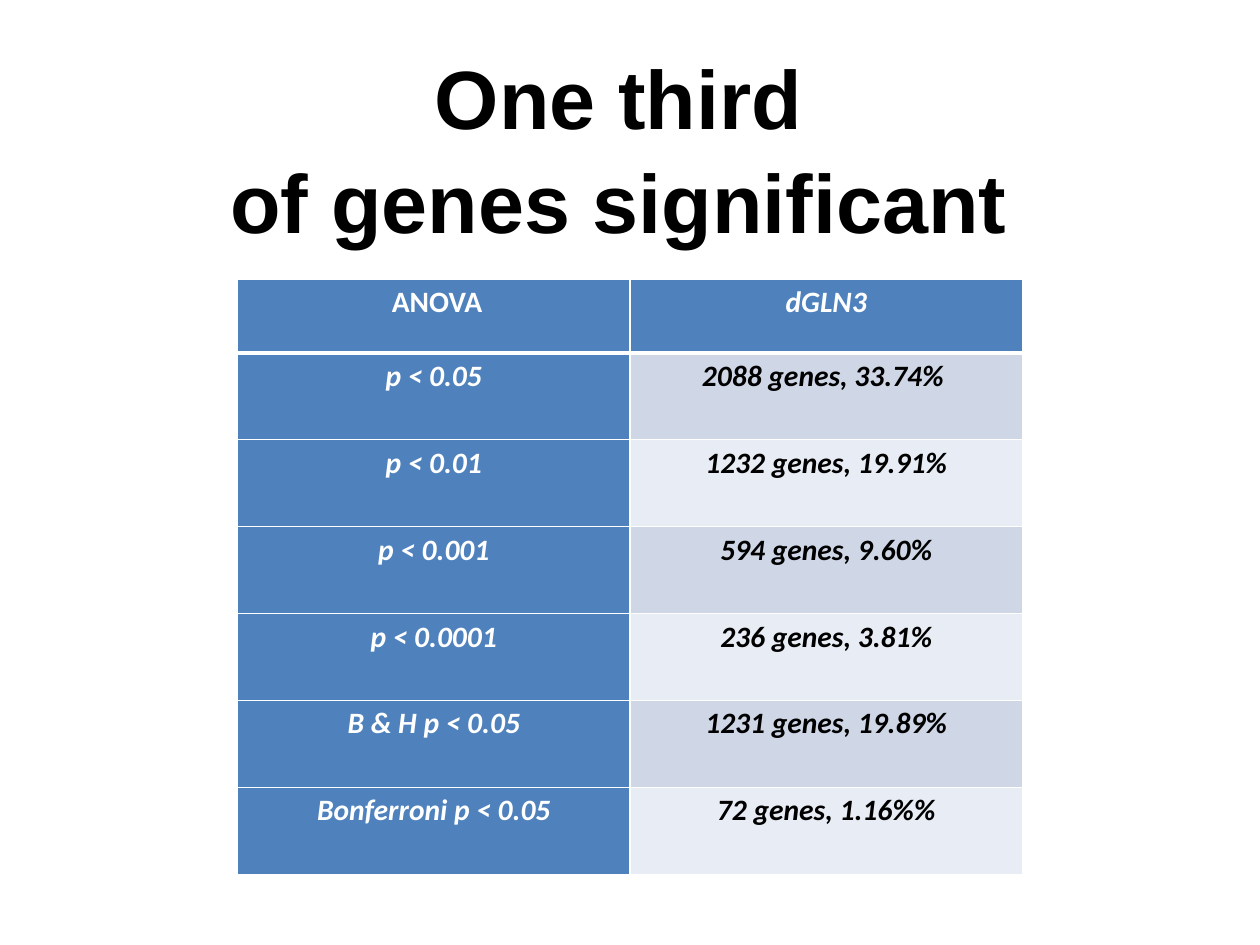
from lxml import etree
from pptx import Presentation
from pptx import util as u
from pptx.dml.color import RGBColor
from pptx.enum import text
from pptx.oxml import ns

# Content
HEADLINE = ["One third ", "of genes significant "]
RESULTS = [
    (" ANOVA", "dGLN3"),
    ("p < 0.05", "2088 genes, 33.74% "),
    ("p < 0.01", "1232 genes, 19.91%"),
    ("p < 0.001", "594 genes, 9.60%"),
    ("p < 0.0001", "236 genes, 3.81%"),
    ("B & H p < 0.05", "1231 genes, 19.89%"),
    ("Bonferroni p < 0.05", "72 genes, 1.16%%"),
]

# Look
BLACK = RGBColor(0x00, 0x00, 0x00)
WHITE = RGBColor(0xFF, 0xFF, 0xFF)
BLUE = RGBColor(0x4F, 0x81, 0xBD)
BANDS = [RGBColor(0xE8, 0xEC, 0xF4), RGBColor(0xCF, 0xD7, 0xE7)]
HEADLINE_FONT = {"name": "Arial", "size": u.Pt(67.2), "bold": True}
RESULT_FONT = {"name": "Calibri", "size": u.Pt(24), "bold": True}
HEADLINE_PLACE = {"left": u.Pt(75), "top": u.Pt(35.3),
                  "width": u.Pt(874), "height": u.Pt(170)}
HEADLINE_FRAME = {"margin_left": 0, "margin_top": 0, "margin_right": 0,
                  "margin_bottom": 0, "word_wrap": True,
                  "auto_size": text.MSO_AUTO_SIZE.NONE,
                  "vertical_anchor": text.MSO_ANCHOR.MIDDLE}
HEADLINE_PARAGRAPH = {"alignment": text.PP_ALIGN.CENTER, "space_before": u.Pt(4)}
RESULT_PARAGRAPH = {"alignment": text.PP_ALIGN.CENTER, "line_spacing": 1.15}
CELL_FRAME = {"margin_left": 0, "margin_top": 0, "margin_right": 0,
              "margin_bottom": 0, "vertical_anchor": text.MSO_ANCHOR.TOP}
TABLE_LEFT, TABLE_TOP, COLUMN_WIDTH = 193, 227, 319
HEADER_HEIGHT, RESULT_HEIGHT = 60, 70.6
THIN, THICK = 1, 3


def apply(target, formats):
    for name, value in formats.items():
        setattr(target, name, value)


def write(paragraph, words, layout, font, color, italic=False):
    apply(paragraph, layout)
    run = paragraph.add_run()
    run.text = words
    apply(run.font, {**font, "italic": italic})
    run.font.color.rgb = color


def add_borders(cell, widths):
    properties = cell._tc.get_or_add_tcPr()
    for side, width in widths.items():
        line = etree.SubElement(properties, ns.qn(f"a:ln{side}"), w=str(u.Pt(width)))
        fill = etree.SubElement(line, ns.qn("a:solidFill"))
        etree.SubElement(fill, ns.qn("a:srgbClr"), val=str(WHITE))


def add_headline(slide):
    headline = slide.shapes.title
    apply(headline, HEADLINE_PLACE)
    frame = headline.text_frame
    apply(frame, HEADLINE_FRAME)
    for i, words in enumerate(HEADLINE):
        paragraph = frame.add_paragraph() if i else frame.paragraphs[0]
        write(paragraph, words, HEADLINE_PARAGRAPH, HEADLINE_FONT, BLACK)


def add_results(slide):
    heights = [HEADER_HEIGHT] + [RESULT_HEIGHT] * (len(RESULTS) - 1)
    results = slide.shapes.add_table(
        len(RESULTS), 2, u.Pt(TABLE_LEFT), u.Pt(TABLE_TOP),
        u.Pt(2 * COLUMN_WIDTH), u.Pt(sum(heights))).table
    for column in results.columns:
        column.width = u.Pt(COLUMN_WIDTH)
    for r, (entries, height) in enumerate(zip(RESULTS, heights)):
        results.rows[r].height = u.Pt(height)
        for c, words in enumerate(entries):
            cell = results.cell(r, c)
            heading = r == 0 or c == 0
            apply(cell, CELL_FRAME)
            # The rule under the header row is thicker than the rest
            add_borders(cell, {"L": THIN, "R": THIN,
                               "T": THICK if r == 1 else THIN,
                               "B": THICK if r == 0 else THIN})
            cell.fill.solid()
            cell.fill.fore_color.rgb = BLUE if heading else BANDS[r % 2]
            write(cell.text_frame.paragraphs[0], words, RESULT_PARAGRAPH,
                  RESULT_FONT, WHITE if heading else BLACK, italic=r + c > 0)


def main():
    deck = Presentation()
    apply(deck, {"slide_width": u.Pt(1024), "slide_height": u.Pt(768)})
    slide = deck.slides.add_slide(deck.slide_layouts[5])
    add_headline(slide)
    add_results(slide)
    deck.save("out.pptx")


if __name__ == "__main__":
    main()
